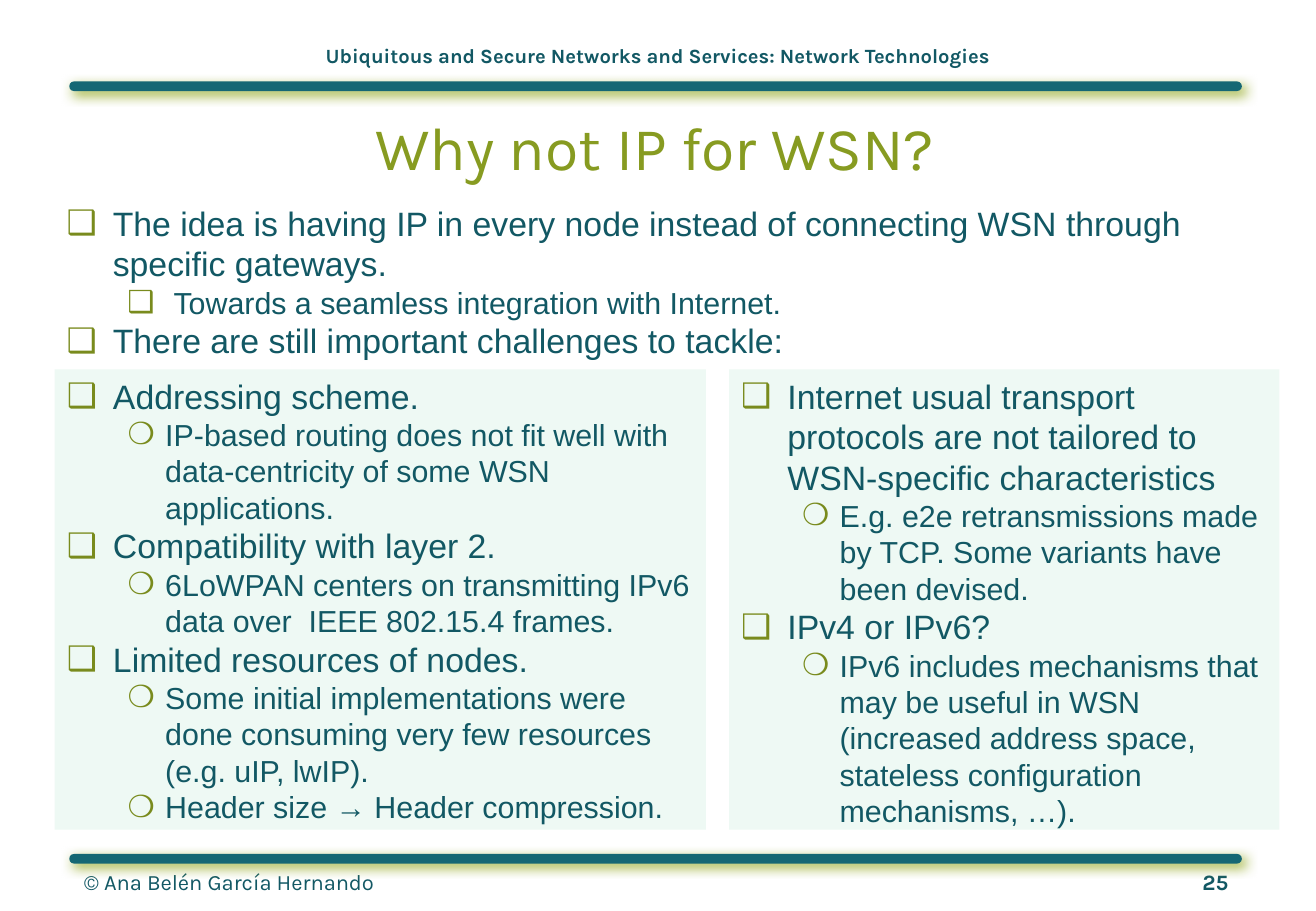
from lxml.etree import SubElement
from pptx import Presentation
from pptx.dml.color import RGBColor
from pptx.enum.shapes import MSO_SHAPE as SHAPE
from pptx.enum.text import MSO_ANCHOR as ANCHOR, MSO_AUTO_SIZE as AUTO, PP_ALIGN as ALIGN
from pptx.oxml.ns import qn
from pptx.util import Pt

PX = 9144
SLIDE_W, SLIDE_H = 1083, 750
TEAL = RGBColor(0x12, 0x58, 0x64)
BAR = RGBColor(0x15, 0x67, 0x74)
GREEN = RGBColor(0x87, 0x9B, 0x21)
BULLET = RGBColor(0x79, 0x8B, 0x1D)
SHADOW = RGBColor(0x95, 0xAA, 0x24)
MINT = RGBColor(0xEE, 0xF9, 0xF4)

HEADER = "Ubiquitous and Secure Networks and Services: Network Technologies"
AUTHOR = "© Ana Belén García Hernando"
PAGE = "25"
TITLE = "Why not IP for WSN?"
INTRO = [
    (0, "The idea is having IP in every node instead of connecting WSN through specific gateways."),
    (1, "Towards a seamless integration with Internet."),
    (0, "There are still important challenges to tackle:"),
]
LEFT = [
    (0, "Addressing scheme."),
    (1, "IP-based routing does not fit well with data-centricity of some WSN applications."),
    (0, "Compatibility with layer 2."),
    (1, "6LoWPAN centers on transmitting IPv6 data over  IEEE 802.15.4 frames."),
    (0, "Limited resources of nodes."),
    (1, "Some initial implementations were done consuming very few resources (e.g. uIP, lwIP)."),
    (1, "Header size → Header compression."),
]
RIGHT = [
    (0, "Internet usual transport protocols are not tailored to WSN-specific characteristics"),
    (1, "E.g. e2e retransmissions made by TCP. Some variants have been devised."),
    (0, "IPv4 or IPv6?"),
    (1, "IPv6 includes mechanisms that may be useful in WSN (increased address space, "
        "stateless configuration mechanisms, …)."),
]
MAIN_LEVEL = ("❑", 38, 38, 20)
INTRO_LEVELS = [MAIN_LEVEL, ("❑", 88, 38, 18)]
COLUMN_LEVELS = [MAIN_LEVEL, ("❍", 81, 31, 18)]
BAR_TOPS = [67, 703]


def place(s, left, top, width, height):
    s.left, s.top, s.width, s.height = (v * PX for v in (left, top, width, height))


def set_frame(s, anchor, inset_x, inset_y):
    tf = s.text_frame
    tf.word_wrap = True
    tf.auto_size = AUTO.NONE
    tf.vertical_anchor = anchor
    tf.margin_left = tf.margin_right = inset_x * PX
    tf.margin_top = tf.margin_bottom = inset_y * PX
    return tf


def style(font, name, size, color, bold=False):
    font.name, font.size, font.bold = name, Pt(size), bold
    font.color.rgb = color


def add_text(slide, box, anchor, inset_x, inset_y):
    s = slide.shapes.add_textbox(*(v * PX for v in box))
    return set_frame(s, anchor, inset_x, inset_y)


def fill_list(tf, items, levels):
    tf.text = "\n".join(text for _, text in items)
    for p, (level, _) in zip(tf.paragraphs, items):
        char, margin, hang, size = levels[level]
        p.level = level
        p.alignment = ALIGN.LEFT
        p.line_spacing = 1.0
        p.space_before = p.space_after = Pt(0)
        pPr = p._p.get_or_add_pPr()
        pPr.set("marL", str(margin * PX))
        pPr.set("indent", str(-hang * PX))
        color = SubElement(pPr, qn("a:buClr"))
        SubElement(color, qn("a:srgbClr"), val=str(BULLET))
        SubElement(pPr, qn("a:buFont"), typeface="Arial")
        SubElement(pPr, qn("a:buChar"), char=char)
        for r in p.runs:
            style(r.font, "Arial", size, TEAL)


def add_bar(slide, top):
    s = slide.shapes.add_shape(SHAPE.ROUNDED_RECTANGLE, 57 * PX, top * PX, 965 * PX, 8 * PX)
    s.adjustments[0] = 0.5
    s.fill.solid()
    s.fill.fore_color.rgb = BAR
    s.line.fill.background()
    s.shadow.inherit = False
    effects = s._element.spPr.find(qn("a:effectLst"))
    shadow = SubElement(effects, qn("a:outerShdw"), blurRad=str(Pt(7)), dist=str(Pt(3)),
                        dir="2700000", algn="tl", rotWithShape="0")
    color = SubElement(shadow, qn("a:srgbClr"), val=str(SHADOW))
    SubElement(color, qn("a:alpha"), val="90000")


def main():
    prs = Presentation()
    prs.slide_width, prs.slide_height = SLIDE_W * PX, SLIDE_H * PX
    slide = prs.slides.add_slide(prs.slide_layouts[3])
    title, left, right = slide.placeholders

    tf = add_text(slide, (61, 711, 960, 30), ANCHOR.TOP, 8, 4)
    p = tf.paragraphs[0]
    tabs = SubElement(p._p.get_or_add_pPr(), qn("a:tabLst"))
    SubElement(tabs, qn("a:tab"), pos=str(942 * PX), algn="r")
    for text, bold in ((AUTHOR + "\t", False), (PAGE, True)):
        r = p.add_run()
        r.text = text
        style(r.font, "Karla", 13, TEAL, bold)

    tf = add_text(slide, (164, 36, 755, 20), ANCHOR.BOTTOM, 0, 0)
    tf.text = HEADER
    tf.paragraphs[0].alignment = ALIGN.CENTER
    style(tf.paragraphs[0].runs[0].font, "Karla", 12, TEAL, True)

    for top in BAR_TOPS:
        add_bar(slide, top)

    place(title, 52, 85, 974, 79)
    tf = set_frame(title, ANCHOR.TOP, 10, 5)
    tf.text = TITLE
    tf.paragraphs[0].alignment = ALIGN.CENTER
    style(tf.paragraphs[0].runs[0].font, "Karla", 36, GREEN)

    for s, x, width, items in ((left, 45, 536, LEFT), (right, 600, 453, RIGHT)):
        place(s, x, 304, width, 379)
        s.fill.solid()
        s.fill.fore_color.rgb = MINT
        fill_list(set_frame(s, ANCHOR.TOP, 10, 5), items, COLUMN_LEVELS)

    tf = add_text(slide, (45, 162, 968, 134), ANCHOR.TOP, 10, 5)
    fill_list(tf, INTRO, INTRO_LEVELS)
    prs.save("out.pptx")


if __name__ == "__main__":
    main()
